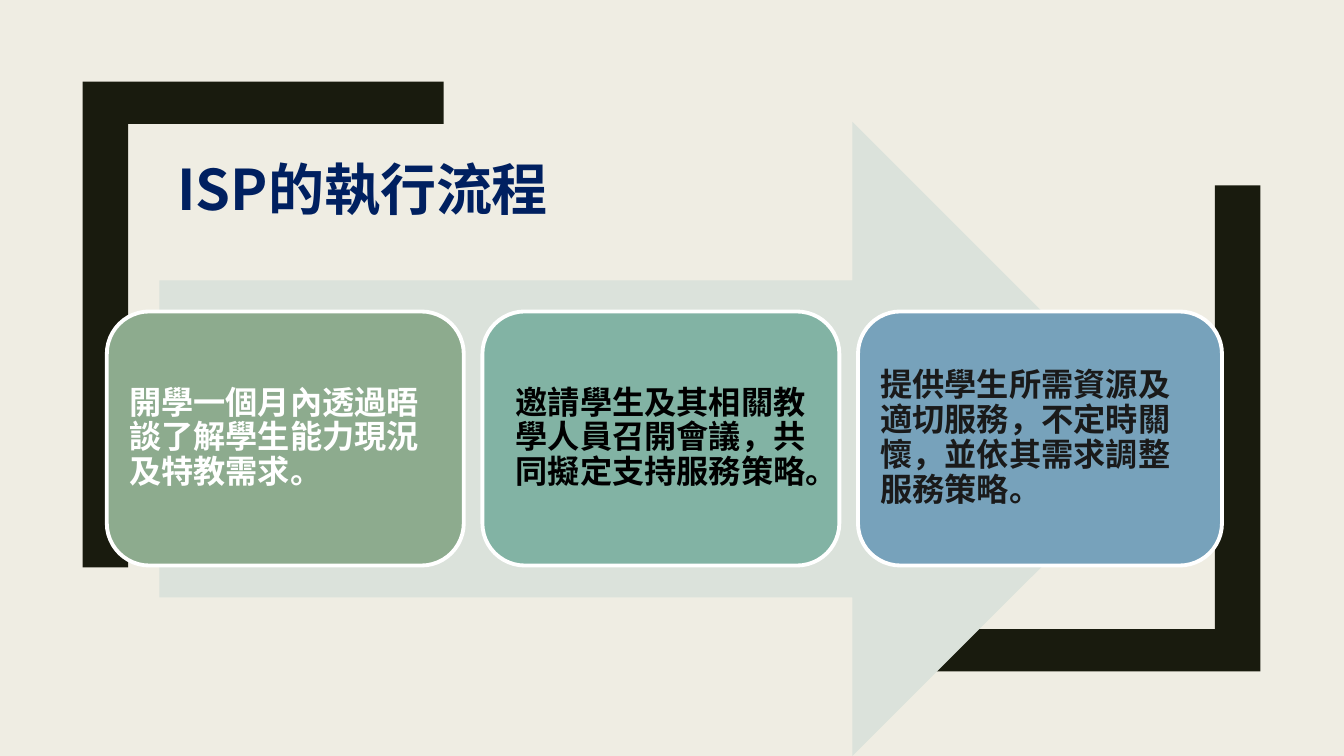
"""Build the ISP process slide: corner brackets, title, arrow and three step cards."""
from lxml import etree
from pptx import Presentation, util as u
from pptx.dml.color import RGBColor
from pptx.enum import shapes, text
from pptx.oxml import ns

PAPER = RGBColor(0xEF, 0xED, 0xE3)
INK = RGBColor(0x19, 0x1B, 0x0E)
NAVY = RGBColor(0x00, 0x20, 0x60)
MIST = RGBColor(0xDB, 0xE2, 0xDB)
SAGE = RGBColor(0x8D, 0xAB, 0x8E)
TEAL = RGBColor(0x82, 0xB3, 0xA4)
BLUE = RGBColor(0x77, 0xA2, 0xBB)
WHITE = RGBColor(0xFF, 0xFF, 0xFF)
BLACK = RGBColor(0x00, 0x00, 0x00)
CHARCOAL = RGBColor(0x1A, 0x1A, 0x1A)
FONT = "Noto Sans CJK SC"


def write(shape, words, size, color, anchor, insets, align=text.PP_ALIGN.LEFT, spacing=1.0):
    """Fill a shape with one bold paragraph."""
    tf = shape.text_frame
    tf.word_wrap = True
    tf.auto_size = text.MSO_AUTO_SIZE.NONE
    tf.vertical_anchor = anchor
    tf.margin_left, tf.margin_top, tf.margin_right, tf.margin_bottom = map(u.Inches, insets)
    p = tf.paragraphs[0]
    p.alignment = align
    p.line_spacing = spacing
    r = p.add_run()
    r.text = words
    r.font.name, r.font.size, r.font.bold = FONT, u.Pt(size), True
    r.font.color.rgb = color
    etree.SubElement(r.font._element, ns.qn("a:ea"), typeface=FONT)


def paint(shape, fill):
    """Give a shape a plain fill without line or shadow."""
    shape.shadow.inherit = False
    shape.fill.solid()
    shape.fill.fore_color.rgb = fill
    shape.line.fill.background()


prs = Presentation()
prs.slide_width, prs.slide_height = u.Inches(13.33), u.Inches(7.5)
s = prs.slides.add_slide(prs.slide_layouts[5])
s.background.fill.solid()
s.background.fill.fore_color.rgb = PAPER

ARM_W, ARM_H, BAR_W, BAR_H = 3.58, 4.82, 0.45, 0.42
outline = [(0, 0), (ARM_W, 0), (ARM_W, BAR_H), (BAR_W, BAR_H), (BAR_W, ARM_H), (0, ARM_H)]
for x, y, turn in [(12.5, 6.66, -1), (0.82, 0.81, 1)]:
    points = [(u.Inches(x + turn * dx), u.Inches(y + turn * dy)) for dx, dy in outline]
    builder = s.shapes.build_freeform(*points[0])
    builder.add_line_segments(points[1:], close=True)
    paint(builder.convert_to_shape(), INK)

title = s.shapes.title
title.left, title.top, title.width, title.height = map(u.Inches, (1.66, 1.39, 11.23, 0.82))
write(title, "ISP的執行流程", size=40, color=NAVY, anchor=text.MSO_ANCHOR.BOTTOM,
      insets=(0.1, 0.05, 0.1, 0.01))

arrow = s.shapes.add_shape(shapes.MSO_SHAPE.RIGHT_ARROW, *map(u.Inches, (1.58, 1.21, 10.02, 6.29)))
paint(arrow, MIST)

CARD_LEFT, CARD_TOP, CARD_H, PITCH = 1.06, 3.09, 2.52, 3.725
steps = [
    ("開學一個月內透過晤談了解學生能力現況及特教需求。", 3.54, SAGE, WHITE, text.PP_ALIGN.LEFT),
    ("邀請學生及其相關教學人員召開會議，共同擬定支持服務策略。", 3.54, TEAL, BLACK, text.PP_ALIGN.CENTER),
    ("提供學生所需資源及適切服務，不定時關懷，並依其需求調整服務策略。", 3.61, BLUE, CHARCOAL, text.PP_ALIGN.LEFT),
]
for i, (words, width, fill, color, align) in enumerate(steps):
    box = (CARD_LEFT + i * PITCH, CARD_TOP, width, CARD_H)
    card = s.shapes.add_shape(shapes.MSO_SHAPE.ROUNDED_RECTANGLE, *map(u.Inches, box))
    paint(card, fill)
    card.line.color.rgb = WHITE
    card.line.width = u.Pt(2.75)
    write(card, words, size=23, color=color, anchor=text.MSO_ANCHOR.MIDDLE,
          insets=(0.1,) * 4, align=align, spacing=0.9)

prs.save("out.pptx")
